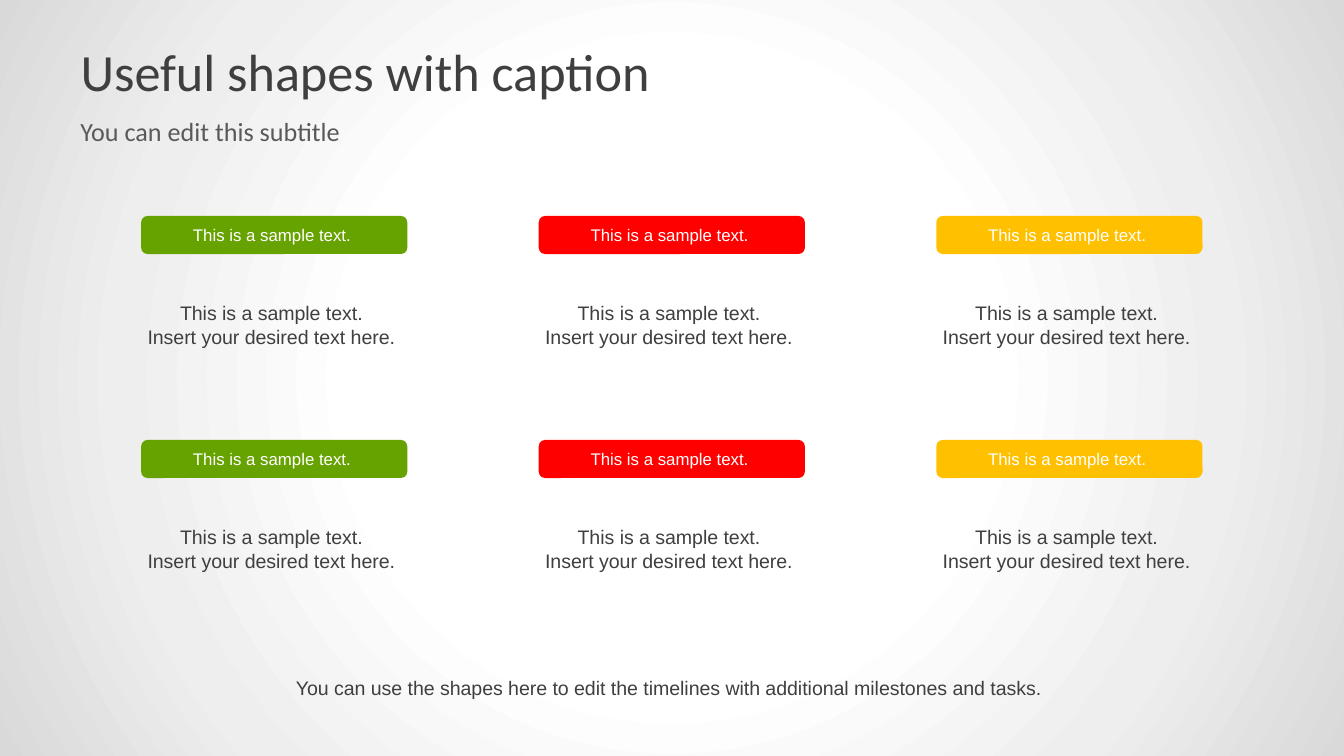
from pptx import Presentation
from pptx.dml.color import RGBColor
from pptx.enum.shapes import MSO_SHAPE
from pptx.enum.text import MSO_ANCHOR, MSO_AUTO_SIZE, PP_ALIGN
from pptx.oxml import parse_xml
from pptx.oxml.ns import nsdecls
from pptx.util import Pt

ROUNDED = MSO_SHAPE.ROUNDED_RECTANGLE
LEFT, CENTER = PP_ALIGN.LEFT, PP_ALIGN.CENTER
TOP, MIDDLE = MSO_ANCHOR.TOP, MSO_ANCHOR.MIDDLE
GROW, FIXED = MSO_AUTO_SIZE.SHAPE_TO_FIT_TEXT, MSO_AUTO_SIZE.NONE

GREEN = RGBColor(0x67, 0xA3, 0x00)
RED = RGBColor(0xFF, 0x00, 0x00)
AMBER = RGBColor(0xFF, 0xC0, 0x00)
WHITE = RGBColor(0xFF, 0xFF, 0xFF)
DARK = RGBColor(0x3F, 0x3F, 0x3F)
GRAY = RGBColor(0x59, 0x59, 0x59)
SILVER = RGBColor(0xEE, 0xEE, 0xEE)
EDGE = RGBColor(0xD9, 0xD9, 0xD9)
BACKGROUND_STOPS = [(41, WHITE), (72, SILVER), (100, EDGE)]

SAMPLE = "This is a sample text. "
INSERT = "Insert your desired text here. "


class SlideBuilder:
    heading_font = "Calibri"
    body_font = "Arial"

    def __init__(self, prs):
        self.s = prs.slides.add_slide(prs.slide_layouts[5])

    def background(self, stops):
        gs = "".join(f'<a:gs pos="{pos * 1000}"><a:srgbClr val="{color}"/></a:gs>'
                     for pos, color in stops)
        bg = parse_xml(
            f'<p:bg {nsdecls("p", "a")}><p:bgPr><a:gradFill rotWithShape="1">'
            f'<a:gsLst>{gs}</a:gsLst><a:path path="circle">'
            '<a:fillToRect l="50000" t="50000" r="50000" b="50000"/></a:path>'
            '</a:gradFill><a:effectLst/></p:bgPr></p:bg>')
        self.s.element.cSld.insert(0, bg)

    def set_text(self, sp, lines, size, color, font, align=CENTER, anchor=TOP,
                 auto_size=FIXED):
        tf = sp.text_frame
        tf.word_wrap = True
        tf.auto_size = auto_size
        tf.vertical_anchor = anchor
        tf.text = "\n".join(lines)
        for p in tf.paragraphs:
            p.alignment = align
            p.font.size = Pt(size)
            p.font.name = font
            p.font.color.rgb = color

    def title(self, text, x, y, w, h):
        sp = self.s.shapes.title
        sp.left, sp.top, sp.width, sp.height = Pt(x), Pt(y), Pt(w), Pt(h)
        self.set_text(sp, [text], 28, DARK, self.heading_font, LEFT, MIDDLE)

    def subtitle(self, text, x, y, w, h):
        sp = self.s.shapes.add_textbox(Pt(x), Pt(y), Pt(w), Pt(h))
        self.set_text(sp, [text], 14, GRAY, self.heading_font, LEFT)
        sp.text_frame.paragraphs[0].space_before = Pt(2.8)

    def group(self):
        return self.s.shapes.add_group_shape().shapes

    def caption(self, lines, x, y, w, h, shapes=None):
        if shapes is None:
            shapes = self.s.shapes
        sp = shapes.add_textbox(Pt(x), Pt(y), Pt(w), Pt(h))
        self.set_text(sp, lines, 10.5, DARK, self.body_font, auto_size=GROW)

    def bar(self, text, x, y, w, h, fill, shapes):
        sp = shapes.add_shape(ROUNDED, Pt(x), Pt(y), Pt(w), Pt(h))
        sp.shadow.inherit = False
        sp.fill.solid()
        sp.fill.fore_color.rgb = fill
        sp.line.fill.background()
        self.set_text(sp, [text], 9, WHITE, self.body_font, anchor=MIDDLE)


def main():
    prs = Presentation()
    prs.slide_width, prs.slide_height = Pt(720), Pt(405)
    slide = SlideBuilder(prs)
    slide.background(BACKGROUND_STOPS)

    # Heading
    slide.title("Useful shapes with caption", 36, 16.5, 648, 42.5)
    slide.subtitle("You can edit this subtitle", 36, 58.5, 648, 30)

    # Footnote
    slide.caption(["You can use the shapes here to edit the timelines "
                   "with additional milestones and tasks. "], 52, 358.6, 616, 20)

    # Two grouped rows of coloured bars, each with a caption below
    for row in range(2):
        y = 115.7 + 120 * row
        shapes = slide.group()
        for col, color in enumerate((GREEN, RED, AMBER)):
            x = 75.6 + 213 * col
            slide.bar(SAMPLE, x, y, 142.6, 20.4, color, shapes)
            slide.caption([SAMPLE, INSERT], x - 9.7, y + 42.2, 162, 32.6, shapes)

    prs.save("out.pptx")


if __name__ == "__main__":
    main()
